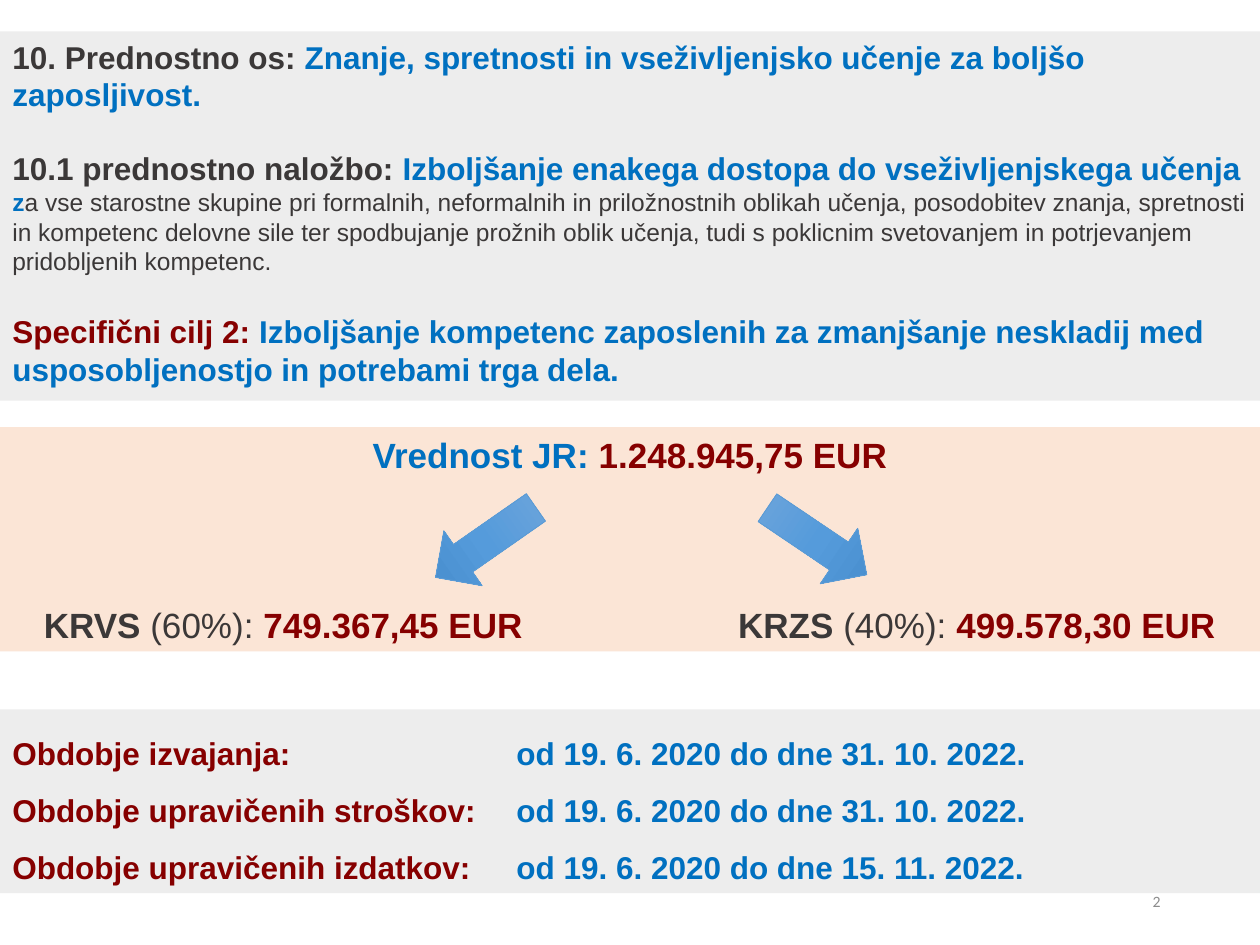
import copy

import pptx
import pptx.dml.color
import pptx.enum.shapes
import pptx.enum.text
import pptx.oxml.ns
import pptx.util
from lxml import etree
from pptx.util import Inches

COLORS = {
    "grey": "EDEDED",
    "peach": "FBE5D6",
    "dark": "3B3838",
    "blue": "0070C0",
    "red": "860000",
    "number": "8C8C8C",
    "arrow_line": "5B9BD5",
    "arrow_top": "71A6DB",
    "arrow_middle": "559BDB",
    "arrow_bottom": "448ACA",
}
SHAPES = pptx.enum.shapes.MSO_SHAPE
ALIGN = pptx.enum.text.PP_ALIGN
ANCHOR = pptx.enum.text.MSO_ANCHOR


def rgb(name):
    return pptx.dml.color.RGBColor.from_string(COLORS[name])


def add_span(para, text, color, size, bold=True, font="Arial"):
    span = para.add_run()
    span.text = text
    span.font.name = font
    span.font.size = pptx.util.Pt(size)
    span.font.bold = bold
    span.font.color.rgb = rgb(color)


def add_tabs(para, positions):
    properties = para._p.get_or_add_pPr()
    tabs = etree.SubElement(properties, pptx.oxml.ns.qn("a:tabLst"))
    for position in positions:
        etree.SubElement(tabs, pptx.oxml.ns.qn("a:tab"), pos=str(Inches(position)), algn="l")


def add_band(page, box, color, paragraphs, align=ALIGN.LEFT, gap=0, line_spacing=None, tabs=()):
    band = page.shapes.add_shape(SHAPES.RECTANGLE, *map(Inches, box))
    band.shadow.inherit = False
    band.fill.solid()
    band.fill.fore_color.rgb = rgb(color)
    band.line.fill.background()
    frame = band.text_frame
    frame.word_wrap = True
    frame.vertical_anchor = ANCHOR.TOP
    for index, spans in enumerate(paragraphs):
        para = frame.add_paragraph() if index else frame.paragraphs[0]
        if tabs:
            add_tabs(para, tabs)
        para.alignment = align
        para.line_spacing = line_spacing
        if index and gap:
            para.space_before = pptx.util.Pt(gap)
        for span in spans:
            add_span(para, *span)
    return band


def add_priorities(page, box):
    add_band(page, box, "grey", [
        [("10. Prednostno os: ", "dark", 18),
         ("Znanje, spretnosti in vseživljenjsko učenje za boljšo zaposljivost.", "blue", 18)],
        [("10.1 prednostno naložbo: ", "dark", 18),
         ("Izboljšanje enakega dostopa do vseživljenjskega učenja ", "blue", 18),
         ("z", "blue", 14),
         ("a vse starostne skupine pri formalnih, neformalnih in priložnostnih oblikah učenja, "
          "posodobitev znanja, spretnosti in kompetenc delovne sile ter spodbujanje prožnih oblik "
          "učenja, tudi s poklicnim svetovanjem in potrjevanjem pridobljenih kompetenc.",
          "dark", 14, False)],
        [("Specifični cilj 2: ", "red", 18),
         ("Izboljšanje kompetenc zaposlenih za zmanjšanje neskladij med usposobljenostjo "
          "in potrebami trga dela.", "blue", 18)],
    ], gap=20.7)


def add_arrow(page, box, rotation):
    arrow = page.shapes.add_shape(SHAPES.DOWN_ARROW, *map(Inches, box))
    arrow.shadow.inherit = False
    arrow.rotation = rotation
    arrow.line.color.rgb = rgb("arrow_line")
    arrow.line.width = pptx.util.Pt(0.5)
    arrow.fill.gradient()
    arrow.fill.gradient_angle = 270
    first = arrow._element.spPr.find(".//" + pptx.oxml.ns.qn("a:gs"))
    first.addnext(copy.deepcopy(first))
    names = ("arrow_top", "arrow_middle", "arrow_bottom")
    for index, (stop, name) in enumerate(zip(arrow.fill.gradient_stops, names)):
        stop.position = index / 2
        stop.color.rgb = rgb(name)


def add_funding(page, box):
    left, top, width, height = box
    band = add_band(page, box, "peach", [
        [("Vrednost JR: ", "blue", 20), ("1.248.945,75 EUR", "red", 20)],
        [("\tKRVS", "dark", 20), (" (60%): ", "dark", 20, False),
         ("749.367,45 EUR\t", "red", 20),
         ("KRZS ", "dark", 20), ("(40%): ", "dark", 20, False),
         ("499.578,30 EUR", "red", 20)],
    ], align=ALIGN.CENTER, gap=73, tabs=(0.25, 5.76))
    band.text_frame.paragraphs[1].alignment = ALIGN.LEFT
    add_arrow(page, (left + 3.59, top + 0.43, 0.53, 0.97), 55.1)
    add_arrow(page, (left + 6.22, top + 0.43, 0.53, 0.95), 304)


def add_periods(page, box):
    periods = [
        ("Obdobje izvajanja:", "31. 10. 2022."),
        ("Obdobje upravičenih stroškov:", "31. 10. 2022."),
        ("Obdobje upravičenih izdatkov:", "15. 11. 2022."),
    ]
    add_band(page, box, "grey", [
        [(label + "\t", "red", 18), ("od 19. 6. 2020 do dne " + end, "blue", 18)]
        for label, end in periods
    ], line_spacing=1.5, tabs=(4,))


def add_page_number(page, box):
    number = page.shapes.add_textbox(*map(Inches, box))
    frame = number.text_frame
    frame.word_wrap = True
    frame.vertical_anchor = ANCHOR.MIDDLE
    para = frame.paragraphs[0]
    para.alignment = ALIGN.RIGHT
    add_span(para, "2", "number", 9, False, "Calibri")


def main():
    deck = pptx.Presentation()
    deck.slide_width = Inches(10)
    deck.slide_height = Inches(7.5)
    page = deck.slides.add_slide(deck.slide_layouts[6])
    add_priorities(page, (0, 0.25, 10, 2.93))
    add_funding(page, (0, 3.39, 10, 1.78))
    add_periods(page, (0, 5.63, 10, 1.46))
    add_page_number(page, (7.06, 6.95, 2.25, 0.4))
    deck.save("out.pptx")


if __name__ == "__main__":
    main()
